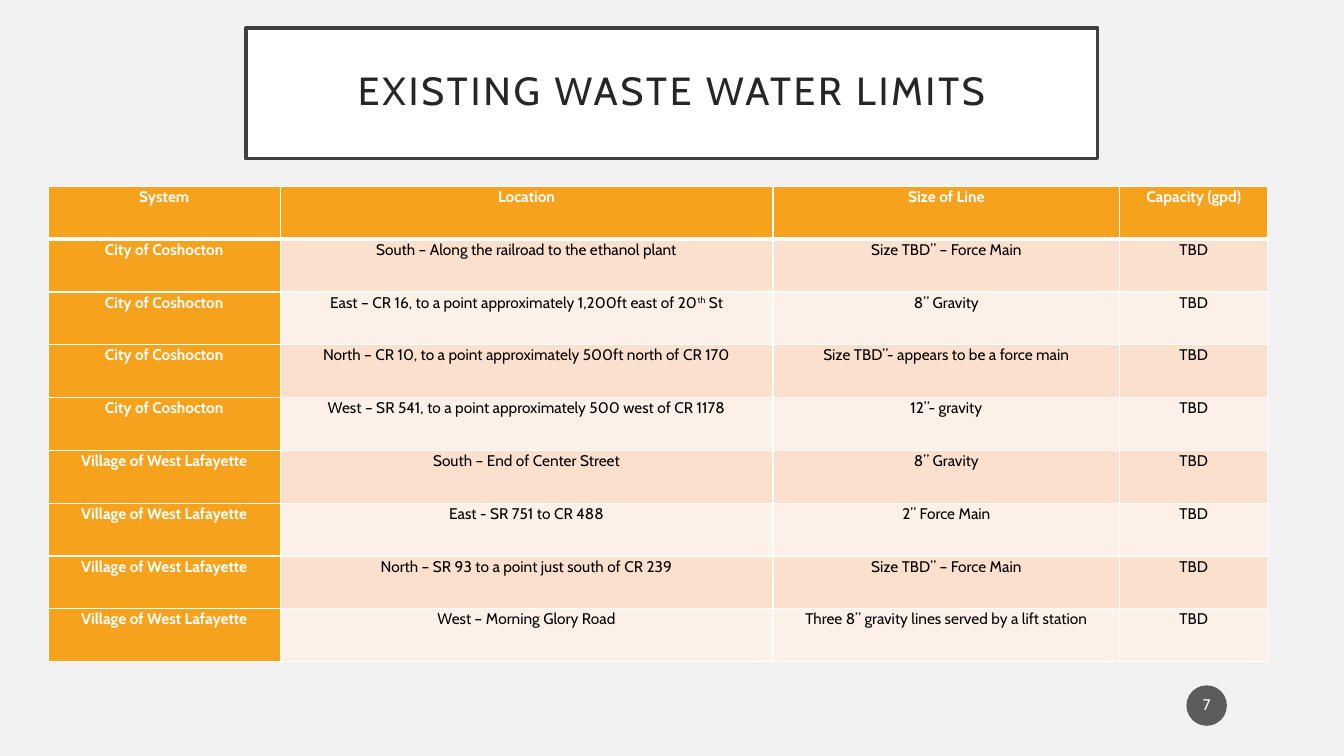
"""Build the slide listing the existing waste water limits."""
from typing import NamedTuple

from lxml import etree
from pptx import Presentation
from pptx.dml.color import RGBColor
from pptx.enum.shapes import MSO_SHAPE
from pptx.enum.text import MSO_ANCHOR, MSO_AUTO_SIZE, PP_ALIGN
from pptx.oxml.ns import qn
from pptx.util import Cm, Pt

OVAL = MSO_SHAPE.OVAL
MIDDLE = MSO_ANCHOR.MIDDLE
TOP = MSO_ANCHOR.TOP
CENTER = PP_ALIGN.CENTER
NO_AUTOFIT = MSO_AUTO_SIZE.NONE

FONT = "Cabin"
WHITE = "FFFFFF"
BLACK = "000000"
ORANGE = "F6A21D"
BANDS = ("FBE0CD", "FDF0E8")
TITLE_ONLY_LAYOUT = 5
SUPERSCRIPT_MARK = "^"
COLUMN_WIDTHS = (5.84, 12.42, 8.74, 3.73)
ROW_HEIGHT = 1.33


class SewerLine(NamedTuple):
    system: str
    location: str
    size: str
    capacity: str = "TBD"


COSHOCTON = "City of Coshocton"
LAFAYETTE = "Village of West Lafayette"
HEADER = SewerLine("System", "Location", "Size of Line", "Capacity (gpd)")
SEWER_LINES = (
    SewerLine(COSHOCTON, "South – Along the railroad to the ethanol plant", "Size TBD” – Force Main"),
    SewerLine(COSHOCTON, "East – CR 16, to a point approximately 1,200ft east of 20^th^ St", "8” Gravity"),
    SewerLine(COSHOCTON, "North – CR 10, to a point approximately 500ft north of CR 170",
              "Size TBD”- appears to be a force main"),
    SewerLine(COSHOCTON, "West – SR 541, to a point approximately 500 west of CR 1178", "12”- gravity"),
    SewerLine(LAFAYETTE, "South – End of Center Street", "8” Gravity"),
    SewerLine(LAFAYETTE, "East - SR 751 to CR 488", "2” Force Main"),
    SewerLine(LAFAYETTE, "North – SR 93 to a point just south of CR 239", "Size TBD” – Force Main"),
    SewerLine(LAFAYETTE, "West – Morning Glory Road", "Three 8” gravity lines served by a lift station"),
)


def set_color(fill, color: str) -> None:
    fill.solid()
    fill.fore_color.rgb = RGBColor.from_string(color)


def write_text(text_frame, text: str, *, size: float = 11, color: str = WHITE, bold: bool = False,
               line_spacing: float = 0.9, letter_spacing: float = 0) -> None:
    paragraph = text_frame.paragraphs[0]
    paragraph.alignment = CENTER
    paragraph.line_spacing = line_spacing
    paragraph.space_before = Pt(0)
    for index, part in enumerate(text.split(SUPERSCRIPT_MARK)):
        run = paragraph.add_run()
        run.text = part
        run.font.name = FONT
        run.font.size = Pt(size)
        run.font.bold = bold
        set_color(run.font.fill, color)
        properties = run._r.get_or_add_rPr()
        if letter_spacing:
            properties.set("spc", str(int(letter_spacing * 100)))
        if index % 2:
            properties.set("baseline", "30000")


def set_margins(owner, horizontal: float, vertical: float) -> None:
    owner.margin_left = owner.margin_right = Cm(horizontal)
    owner.margin_top = owner.margin_bottom = Cm(vertical)


def set_borders(cell, top: float, bottom: float) -> None:
    properties = cell._tc.get_or_add_tcPr()
    widths = {"a:lnL": 1, "a:lnR": 1, "a:lnT": top, "a:lnB": bottom}
    for position, (tag, width) in enumerate(widths.items()):
        border = etree.Element(qn(tag), w=str(Pt(width)))
        fill = etree.SubElement(border, qn("a:solidFill"))
        etree.SubElement(fill, qn("a:srgbClr"), val=WHITE)
        properties.insert(position, border)


def add_title(slide) -> None:
    title = slide.shapes.title
    title.left, title.top, title.width, title.height = Cm(6.2), Cm(0.7), Cm(21.46), Cm(3.3)
    set_color(title.fill, WHITE)
    set_color(title.line.fill, "404040")
    title.line.width = Pt(2.5)
    text_frame = title.text_frame
    text_frame.word_wrap = True
    text_frame.auto_size = NO_AUTOFIT
    text_frame.vertical_anchor = MIDDLE
    set_margins(text_frame, 0.5, 0.5)
    write_text(text_frame, "EXISTING WASTE WATER LIMITS", size=28, color="262626", letter_spacing=2)


def add_limits_table(slide) -> None:
    rows = (HEADER, *SEWER_LINES)
    table = slide.shapes.add_table(
        len(rows), len(COLUMN_WIDTHS), Cm(1.22), Cm(4.7),
        Cm(sum(COLUMN_WIDTHS)), Cm(ROW_HEIGHT * len(rows))).table
    table.first_row = table.horz_banding = False
    for column, width in zip(table.columns, COLUMN_WIDTHS):
        column.width = Cm(width)
    for row_index, sewer_line in enumerate(rows):
        table.rows[row_index].height = Cm(ROW_HEIGHT)
        for column_index, text in enumerate(sewer_line):
            cell = table.cell(row_index, column_index)
            is_heading = row_index == 0 or column_index == 0
            set_color(cell.fill, ORANGE if is_heading else BANDS[(row_index - 1) % 2])
            set_borders(cell, top=3 if row_index == 1 else 1, bottom=3 if row_index == 0 else 1)
            set_margins(cell, 0.13, 0)
            cell.vertical_anchor = TOP
            write_text(cell.text_frame, text, color=WHITE if is_heading else BLACK,
                       bold=is_heading, line_spacing=1.06)


def add_page_number(slide) -> None:
    circle = slide.shapes.add_shape(OVAL, Cm(29.9), Cm(17.27), Cm(1.02), Cm(1.02))
    circle.shadow.inherit = False
    circle.line.fill.background()
    set_color(circle.fill, "1D1D1D")
    fill_color = circle._element.spPr.find(qn("a:solidFill"))[0]
    etree.SubElement(fill_color, qn("a:alpha"), val="70000")
    circle.text_frame.vertical_anchor = MIDDLE
    set_margins(circle.text_frame, 0.05, 0.13)
    write_text(circle.text_frame, "7")


def main() -> None:
    presentation = Presentation()
    presentation.slide_width, presentation.slide_height = Cm(33.87), Cm(19.05)
    slide = presentation.slides.add_slide(presentation.slide_layouts[TITLE_ONLY_LAYOUT])
    set_color(slide.background.fill, "F2F2F2")
    add_title(slide)
    add_limits_table(slide)
    add_page_number(slide)
    presentation.save("out.pptx")


if __name__ == "__main__":
    main()
